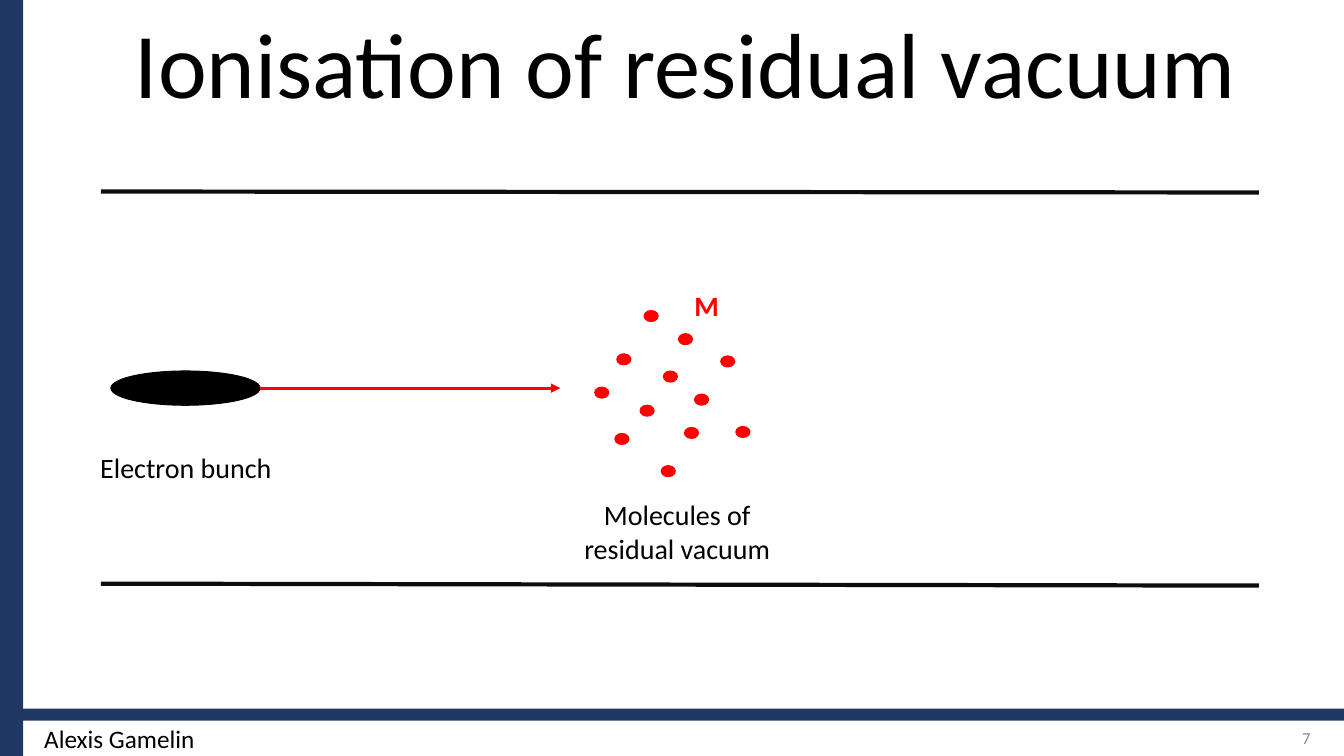
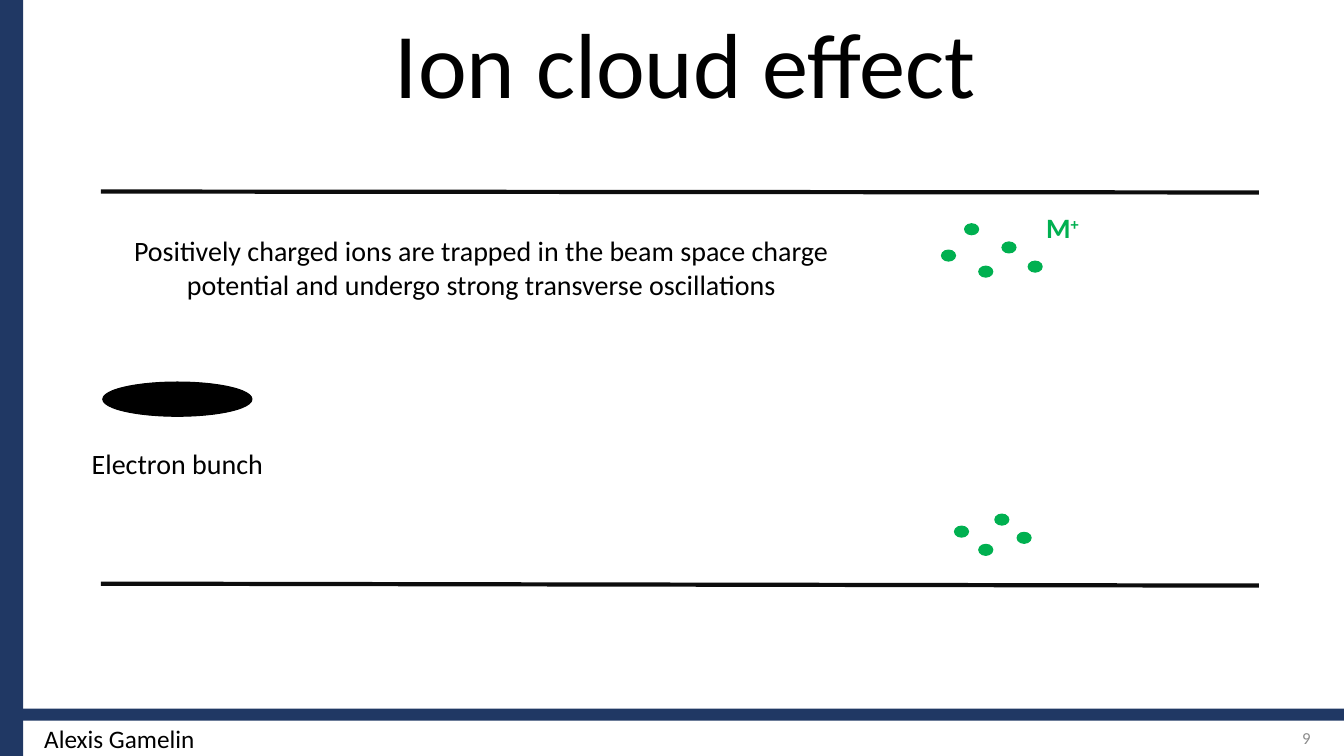
from dataclasses import dataclass
from typing import NamedTuple

from lxml import etree
from pptx import Presentation
from pptx.dml.color import RGBColor
from pptx.enum.shapes import MSO_CONNECTOR, MSO_SHAPE
from pptx.enum.text import MSO_ANCHOR, PP_ALIGN
from pptx.oxml.ns import qn
from pptx.slide import Slide
from pptx.util import Pt

RECTANGLE, ELLIPSE = MSO_SHAPE.RECTANGLE, MSO_SHAPE.OVAL
STRAIGHT = MSO_CONNECTOR.STRAIGHT
LEFT, CENTER, RIGHT = PP_ALIGN.LEFT, PP_ALIGN.CENTER, PP_ALIGN.RIGHT
TOP, MIDDLE, BOTTOM = MSO_ANCHOR.TOP, MSO_ANCHOR.MIDDLE, MSO_ANCHOR.BOTTOM


@dataclass(frozen=True)
class Theme:
    font: str = "Calibri"
    navy: str = "203864"
    black: str = "000000"
    wall: str = "0D0D0D"
    grey: str = "8C8C8C"
    molecule: str = "FF0000"
    ion: str = "00B050"
    title_size: float = 66
    label_size: float = 20
    author_size: float = 18
    number_size: float = 12


class Box(NamedTuple):
    left: float
    top: float
    width: float
    height: float


class Point(NamedTuple):
    x: float
    y: float


THEME = Theme()
SLIDE_WIDTH, SLIDE_HEIGHT = 960, 540
PARTICLE_WIDTH, PARTICLE_HEIGHT = 10.1, 7.9
BUNCH_WIDTH, BUNCH_HEIGHT = 106.6, 24.5

BANDS = (
    Box(0, 506.2, SLIDE_WIDTH, 8.6),
    Box(0, 0, 16.6, SLIDE_HEIGHT),
)
CHAMBER_WALLS = (
    (Point(72, 136.8), Point(899.3, 137.5)),
    (Point(72, 416.9), Point(899.3, 418.3)),
)
MOLECULES = (
    Point(424.8, 276.5), Point(440.6, 252.7), Point(457.2, 289.4),
    Point(439.2, 309.6), Point(473.8, 265), Point(488.9, 305.3),
    Point(496.1, 281.5), Point(484.6, 238.3), Point(472.3, 332.6),
    Point(525.6, 304.6), Point(514.8, 254.2), Point(460.1, 221.8),
)
IONS = (
    Point(672.5, 178.6), Point(715.7, 172.8), Point(699.1, 190.1),
    Point(681.8, 375.8), Point(689, 159.8), Point(734.4, 186.5),
    Point(699.1, 388.8), Point(726.5, 380.2), Point(710.6, 367.2),
)


def add_text(slide: Slide, text: str, box: Box, *, size: float = THEME.label_size,
             color: str = THEME.black, bold: bool = False, align: PP_ALIGN = CENTER,
             anchor: MSO_ANCHOR = TOP, line_spacing: float = 1.0,
             superscript: str = "") -> None:
    frame = slide.shapes.add_textbox(*map(Pt, box)).text_frame
    frame.word_wrap = True
    frame.vertical_anchor = anchor
    paragraph = frame.paragraphs[0]
    paragraph.alignment = align
    paragraph.line_spacing = line_spacing
    for part in filter(None, (text, superscript)):
        run = paragraph.add_run()
        run.text = part
        run.font.name = THEME.font
        run.font.size = Pt(size)
        run.font.bold = bold
        run.font.color.rgb = RGBColor.from_string(color)
    if superscript:
        run.font._element.set("baseline", "30000")


def add_filled(slide: Slide, preset: MSO_SHAPE, box: Box, color: str,
               outlined: bool = False) -> None:
    shape = slide.shapes.add_shape(preset, *map(Pt, box))
    shape.shadow.inherit = False
    shape.fill.solid()
    shape.fill.fore_color.rgb = RGBColor.from_string(color)
    if outlined:
        shape.line.color.rgb = RGBColor.from_string(color)
        shape.line.width = Pt(0.75)
    else:
        shape.line.fill.background()


def add_line(slide: Slide, start: Point, end: Point, color: str, width: float,
             arrow: bool = False) -> None:
    connector = slide.shapes.add_connector(STRAIGHT, *map(Pt, (*start, *end)))
    connector.line.color.rgb = RGBColor.from_string(color)
    connector.line.width = Pt(width)
    if arrow:
        outline = connector.line._get_or_add_ln()
        etree.SubElement(outline, qn("a:tailEnd"), type="triangle")
    etree.SubElement(connector._element.spPr, qn("a:effectLst"))


def add_particles(slide: Slide, corners: tuple[Point, ...], color: str) -> None:
    for corner in corners:
        box = Box(*corner, PARTICLE_WIDTH, PARTICLE_HEIGHT)
        add_filled(slide, ELLIPSE, box, color, outlined=True)


def add_bunch(slide: Slide, corner: Point, label_box: Box) -> None:
    box = Box(*corner, BUNCH_WIDTH, BUNCH_HEIGHT)
    add_filled(slide, ELLIPSE, box, THEME.black, outlined=True)
    add_text(slide, "Electron bunch", label_box)


def add_chamber_slide(deck: Presentation, title: str, number: int) -> Slide:
    """Add a slide with the bands, footer, title and both chamber walls."""
    slide = deck.slides.add_slide(deck.slide_layouts[6])
    for band in BANDS:
        add_filled(slide, RECTANGLE, band, THEME.navy)
    add_text(slide, str(number), Box(727.2, 512.6, 216, 28.8),
             size=THEME.number_size, color=THEME.grey, align=RIGHT, anchor=MIDDLE)
    add_text(slide, "Alexis Gamelin", Box(24.5, 513.4, 258.5, 28.8),
             size=THEME.author_size, align=LEFT)
    add_text(slide, title, Box(36, 20.2, 907.2, 67.7), size=THEME.title_size,
             anchor=BOTTOM, line_spacing=0.9)
    for start, end in CHAMBER_WALLS:
        add_line(slide, start, end, THEME.wall, 3)
    return slide


def build_ionisation(deck: Presentation) -> None:
    slide = add_chamber_slide(deck, "Ionisation of residual vacuum", 7)
    add_bunch(slide, Point(79.2, 265), Box(62.6, 318.2, 140.4, 31.7))
    add_line(slide, Point(185.8, 277.2), Point(400.3, 277.2), THEME.molecule, 2.25,
             arrow=True)
    add_particles(slide, MOLECULES, THEME.molecule)
    add_text(slide, "Molecules of residual vacuum", Box(408.2, 352.1, 151.2, 55.4))
    add_text(slide, "M", Box(488.9, 202.3, 36, 31.7), color=THEME.molecule,
             bold=True, align=LEFT)


def build_ion_cloud(deck: Presentation) -> None:
    slide = add_chamber_slide(deck, "Ion cloud effect", 9)
    add_bunch(slide, Point(73.4, 272.9), Box(44.6, 315.4, 164.2, 31.7))
    add_particles(slide, IONS, THEME.ion)
    add_text(slide, "Positively charged ions are trapped in the beam space charge "
             "potential and undergo strong transverse oscillations",
             Box(82.8, 163.4, 522, 55.4))
    add_text(slide, "M", Box(740.2, 146.9, 42.5, 31.7), color=THEME.ion,
             bold=True, align=LEFT, superscript="+")


def main() -> None:
    deck = Presentation()
    deck.slide_width, deck.slide_height = Pt(SLIDE_WIDTH), Pt(SLIDE_HEIGHT)
    build_ionisation(deck)
    build_ion_cloud(deck)
    deck.save("out.pptx")


if __name__ == "__main__":
    main()
